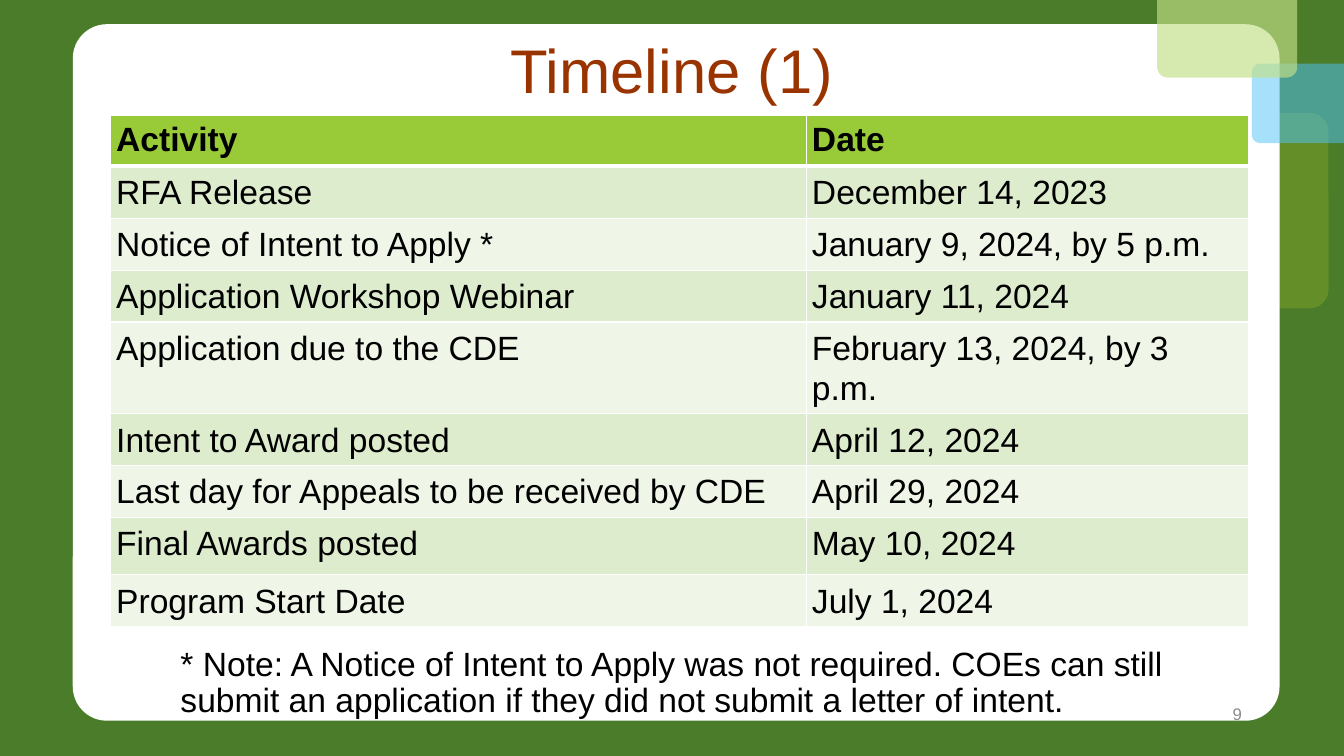
from dataclasses import dataclass
from lxml import etree
from pptx import Presentation
from pptx import util as u
from pptx.dml.color import RGBColor
from pptx.enum import shapes, text
from pptx.oxml.ns import qn


@dataclass(frozen=True)
class Theme:
    font: str = "Arial"
    back: str = "4A7C29"
    white: str = "FFFFFF"
    olive: str = "739A28"
    blue: str = "51C3F9"
    pale: str = "C2E088"
    rust: str = "993300"
    black: str = "000000"
    gray: str = "8C8C8C"
    head: str = "99CB38"
    bands: tuple = ("DEECCE", "EFF6E8")
    big: int = 44
    body: int = 24
    small: int = 12


THEME = Theme()
PANELS = [
    ((789, 80.6, 160, 139.7), 0.095, THEME.olive, 62),
    ((52, 17.3, 862, 497.5), 0.049, THEME.white, 100),
    ((894.2, 45.4, 160, 56.9), 0.103, THEME.blue, 50),
    ((826.6, -38.2, 100, 93.6), 0.079, THEME.pale, 66),
]
ROWS = [
    ("Activity", "Date"),
    ("RFA Release", "December 14, 2023"),
    ("Notice of Intent to Apply *", "January 9, 2024, by 5 p.m."),
    ("Application Workshop Webinar", "January 11, 2024"),
    ("Application due to the CDE", "February 13, 2024, by 3 p.m."),
    ("Intent to Award posted", "April 12, 2024"),
    ("Last day for Appeals to be received by CDE", "April 29, 2024"),
    ("Final Awards posted", "May 10, 2024"),
    ("Program Start Date", "July 1, 2024"),
]
NOTE = ("* Note: A Notice of Intent to Apply was not required. COEs can still "
        "submit an application if they did not submit a letter of intent.")


def points(box):
    return [u.Pt(n) for n in box]


def paint(fill, color):
    fill.solid()
    fill.fore_color.rgb = RGBColor.from_string(color)


def style(para, size, color, bold=False, align=text.PP_ALIGN.LEFT, gap=1.0):
    para.alignment = align
    para.line_spacing = gap
    para.space_before = u.Pt(0)
    for run in para.runs:
        font = run.font
        font.name, font.size, font.bold = THEME.font, u.Pt(size), bold
        font.color.rgb = RGBColor.from_string(color)


def place(shape, box):
    shape.left, shape.top, shape.width, shape.height = points(box)


def add_panel(slide, box, curve, color, alpha):
    panel = slide.shapes.add_shape(shapes.MSO_SHAPE.ROUNDED_RECTANGLE, *points(box))
    panel.adjustments[0] = curve
    panel.shadow.inherit = False
    panel.line.fill.background()
    paint(panel.fill, color)
    if alpha < 100:
        tint = panel._element.spPr.find(qn("a:solidFill"))[0]
        etree.SubElement(tint, qn("a:alpha")).set("val", str(alpha * 1000))


def add_title(slide, box):
    title = slide.shapes.title
    place(title, box)
    slide.shapes._spTree.append(title._element)
    frame = title.text_frame
    frame.text = "Timeline (1)"
    frame.auto_size = text.MSO_AUTO_SIZE.NONE
    frame.vertical_anchor = text.MSO_ANCHOR.MIDDLE
    style(frame.paragraphs[0], THEME.big, THEME.rust, align=text.PP_ALIGN.CENTER, gap=0.9)


def edge(cell, row):
    props = cell._tc.get_or_add_tcPr()
    for side in "LRTB":
        thick = (row == 0 and side == "B") or (row == 1 and side == "T")
        line = etree.SubElement(props, qn(f"a:ln{side}"), w=str(u.Pt(3 if thick else 1)))
        fill = etree.SubElement(line, qn("a:solidFill"))
        etree.SubElement(fill, qn("a:srgbClr"), val=THEME.white)


def add_dates(slide, box):
    grid = slide.shapes.add_table(len(ROWS), 2, *points(box)).table
    split = 497
    grid.columns[0].width = u.Pt(split)
    grid.columns[1].width = u.Pt(box[2] - split)
    for r, row in enumerate(ROWS):
        grid.rows[r].height = u.Pt({0: 36.5, 7: 41}.get(r, 37.1))
        for c, words in enumerate(row):
            cell = grid.cell(r, c)
            cell.margin_left = cell.margin_right = u.Pt(4)
            cell.margin_top = cell.margin_bottom = u.Pt(4)
            edge(cell, r)
            paint(cell.fill, THEME.bands[(r - 1) % 2] if r else THEME.head)
            cell.text_frame.text = words
            style(cell.text_frame.paragraphs[0], THEME.body, THEME.black,
                  bold=r == 0, gap=1.07 if r else 1.0)


def add_note(slide, box):
    note = slide.placeholders[1]
    place(note, box)
    slide.shapes._spTree.append(note._element)
    frame = note.text_frame
    frame.text = NOTE
    frame.auto_size = text.MSO_AUTO_SIZE.NONE
    para = frame.paragraphs[0]
    props = para._p.get_or_add_pPr()
    props.set("marL", "0")
    props.set("indent", "0")
    etree.SubElement(props, qn("a:buNone"))
    style(para, THEME.body, THEME.black, gap=0.9)


def add_page(slide, box):
    frame = slide.shapes.add_textbox(*points(box)).text_frame
    frame.word_wrap = True
    frame.vertical_anchor = text.MSO_ANCHOR.MIDDLE
    frame.text = "9"
    style(frame.paragraphs[0], THEME.small, THEME.gray, align=text.PP_ALIGN.RIGHT)


def main():
    deck = Presentation()
    deck.slide_width, deck.slide_height = points((960, 540))
    slide = deck.slides.add_slide(deck.slide_layouts[1])
    paint(slide.background.fill, THEME.back)
    for panel in PANELS:
        add_panel(slide, *panel)
    add_title(slide, (106.6, 0, 746.6, 104.4))
    add_dates(slide, (79, 82.3, 813, 337.2))
    add_note(slide, (121.7, 458.6, 777.6, 70.6))
    add_page(slide, (678.2, 495.4, 216, 28.8))
    deck.save("out.pptx")


if __name__ == "__main__":
    main()
